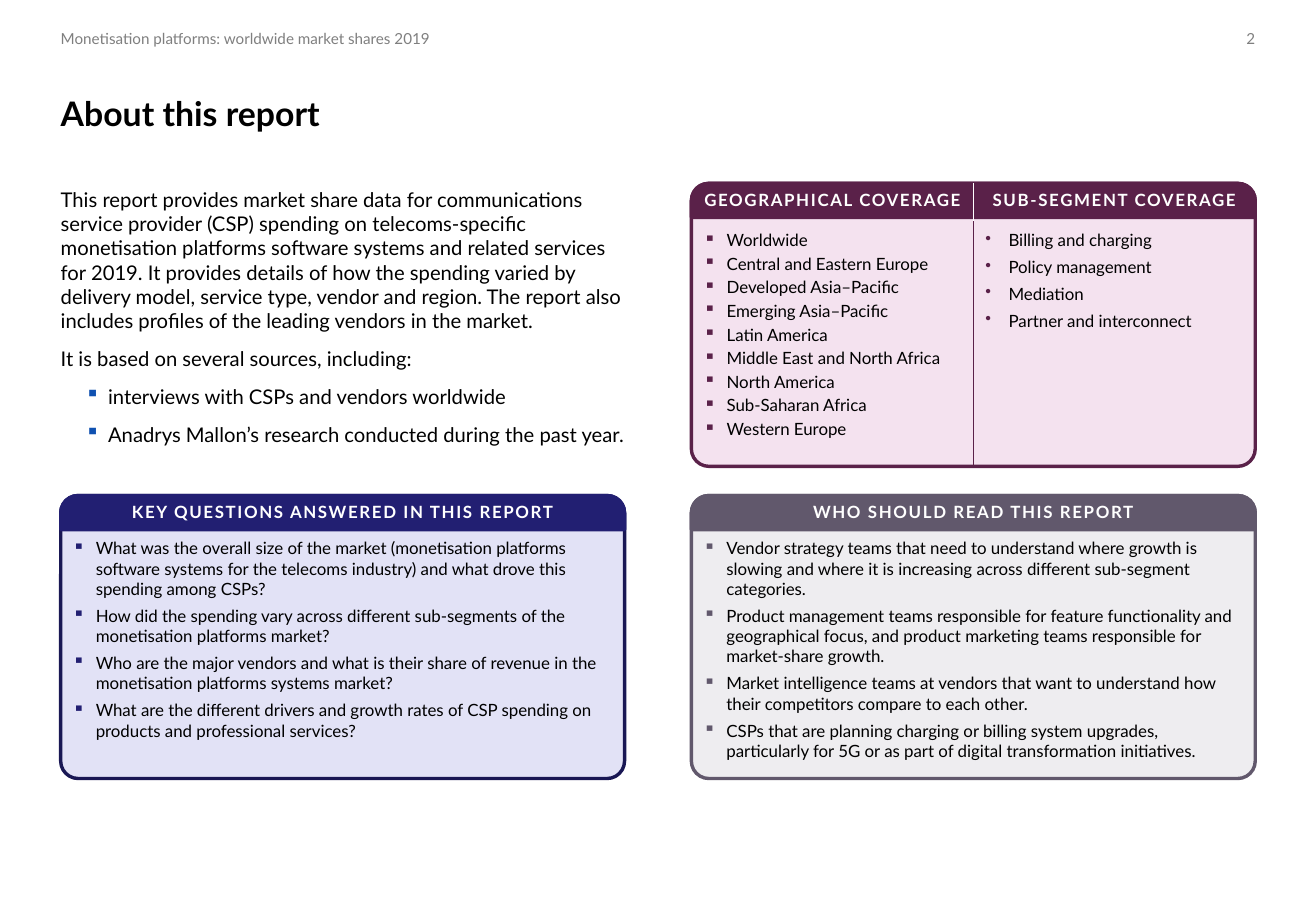
from dataclasses import dataclass
from pptx import Presentation
from pptx.dml.color import RGBColor
from pptx.enum.shapes import MSO_CONNECTOR, MSO_SHAPE
from pptx.enum.text import MSO_ANCHOR, PP_ALIGN
from pptx.oxml.ns import qn
from pptx.oxml.xmlchemy import OxmlElement
from pptx.util import Pt

ROUND = MSO_SHAPE.ROUNDED_RECTANGLE
TOP = MSO_SHAPE.ROUND_2_SAME_RECTANGLE
LINE = MSO_CONNECTOR.STRAIGHT
MID = MSO_ANCHOR.MIDDLE
UPPER = MSO_ANCHOR.TOP
LEFT, MIDDLE, RIGHT = PP_ALIGN.LEFT, PP_ALIGN.CENTER, PP_ALIGN.RIGHT
SCALE = 9144
BAR = 28
HANG = 19


@dataclass(frozen=True)
class Theme:
    font: str = "Lato"
    ink: str = "000000"
    white: str = "FFFFFF"
    grey: str = "7F7F7F"
    mark: str = "0F51B1"
    blue: tuple = ("221F72", "191754", "C7C6EF")
    slate: tuple = ("61586C", "61586C", "DFDCE3")
    plum: tuple = ("5A2149", "5A2149", "EAC6E0")
    small: int = 9
    note: int = 10
    body: int = 12
    title: int = 20


THEME = Theme()

INTRO = [
    "This report provides market share data for communications service provider (CSP) spending on "
    "telecoms-specific monetisation platforms software systems and related services for 2019. It "
    "provides details of how the spending varied by delivery model, service type, vendor and region. "
    "The report also includes profiles of the leading vendors in the market.",
    "It is based on several sources, including:",
]
SOURCES = [
    "interviews with CSPs and vendors worldwide",
    "Anadrys Mallon’s research conducted during the past year.",
]
ASKED = [
    "What was the overall size of the market (monetisation platforms software systems for the "
    "telecoms industry) and what drove this spending among CSPs?",
    "How did the spending vary across different sub-segments of the monetisation platforms market?",
    "Who are the major vendors and what is their share of revenue in the monetisation platforms "
    "systems market?",
    "What are the different drivers and growth rates of CSP spending on products and professional "
    "services?",
]
READERS = [
    "Vendor strategy teams that need to understand where growth is slowing and where it is "
    "increasing across different sub-segment categories.",
    "Product management teams responsible for feature functionality and geographical focus, and "
    "product marketing teams responsible for market-share growth.",
    "Market intelligence teams at vendors that want to understand how their competitors compare to "
    "each other.",
    "CSPs that are planning charging or billing system upgrades, particularly for 5G or as part of "
    "digital transformation initiatives.",
]
SCOPE = [
    ("GEOGRAPHICAL COVERAGE", "▪", 2, [
        "Worldwide", "Central and Eastern Europe", "Developed Asia–Pacific",
        "Emerging Asia–Pacific", "Latin America", "Middle East and North Africa",
        "North America", "Sub-Saharan Africa", "Western Europe"]),
    ("SUB-SEGMENT COVERAGE", "•", 4, [
        "Billing and charging", "Policy management", "Mediation", "Partner and interconnect"]),
]


def px(*sizes):
    return [size * SCALE for size in sizes]


def rgb(tone):
    return RGBColor.from_string(tone)


def child(root, tag, **attrs):
    node = OxmlElement(tag)
    for key, value in attrs.items():
        node.set(key, str(value))
    root.append(node)
    return node


def write(frame, text, size, tone=THEME.ink, bold=False, align=LEFT, after=0,
          bullet=None, dot=None, left=HANG, track=0):
    para = frame.paragraphs[0]
    if para.runs:
        para = frame.add_paragraph()
    para.alignment = align
    para.space_after = Pt(after)
    if bullet:
        props = para._p.get_or_add_pPr()
        props.set("marL", str(left * SCALE))
        props.set("indent", str(-HANG * SCALE))
        child(child(props, "a:buClr"), "a:srgbClr", val=dot)
        child(props, "a:buChar", char=bullet)
    run = para.add_run()
    run.text = text
    font = run.font
    font.name, font.size, font.bold = THEME.font, Pt(size), bold
    font.color.rgb = rgb(tone)
    if track:
        run._r.get_or_add_rPr().set("spc", str(track * 100))
    return para


def inset(frame, side, top, base, anchor):
    frame.word_wrap = True
    frame.vertical_anchor = anchor
    frame.margin_left = frame.margin_right = side * SCALE
    frame.margin_top, frame.margin_bottom = px(top, base)


def label(slide, box, side=0, anchor=MID):
    frame = slide.shapes.add_textbox(*px(*box)).text_frame
    inset(frame, side, 5, 5, anchor)
    return frame


def block(slide, kind, box, fill, edge, *bends):
    shape = slide.shapes.add_shape(kind, *px(*box))
    shape.shadow.inherit = False
    shape.fill.solid()
    shape.fill.fore_color.rgb = rgb(fill)
    shape.line.color.rgb = rgb(edge)
    shape.line.width = Pt(2)
    for spot, bend in enumerate(bends):
        shape.adjustments[spot] = bend
    return shape


def panel(slide, box, tones, head=None, items=()):
    x, y, w, h = box
    main, edge, pale = tones
    card = block(slide, ROUND, box, pale, edge, 0.062)
    tint = card._element.spPr.find(qn("a:solidFill"))[0]
    child(tint, "a:alpha", val=50000)
    bar = block(slide, TOP, (x, y, w, BAR), main, main, 0.5, 0)
    if head:
        inset(bar.text_frame, 10, 0, 5, MID)
        write(bar.text_frame, head, THEME.note, THEME.white, True, MIDDLE, track=1)
        frame = label(slide, (x, y + BAR + 2, w, h - BAR - 2), 10, UPPER)
        for item in items:
            write(frame, item, THEME.note, after=4, bullet="▪", dot=main)


def border(cell, drawn, tone):
    props = cell._tc.get_or_add_tcPr()
    for side in "LRTB":
        edge = child(props, f"a:ln{side}", w=Pt(1))
        if side == drawn:
            child(child(edge, "a:solidFill"), "a:srgbClr", val=tone)
        else:
            child(edge, "a:noFill")
    cell.fill.background()


def scope(slide, box):
    x, y, w, h = box
    main = THEME.plum[0]
    panel(slide, box, THEME.plum)
    table = slide.shapes.add_table(1, 2, *px(*box)).table
    table.first_row = table.horz_banding = False
    for cell, drawn, (head, mark, gap, items) in zip(table.rows[0].cells, "RL", SCOPE):
        border(cell, drawn, main)
        inset(cell, 10, 5, 5, UPPER)
        frame = cell.text_frame
        write(frame, head, THEME.note, THEME.white, True, MIDDLE, 12, track=1)
        for item in items:
            write(frame, item, THEME.note, after=gap, bullet=mark, dot=main)
    mid = x + w // 2
    rule = slide.shapes.add_connector(LINE, *px(mid, y + BAR + 3, mid, y))
    rule.line.color.rgb = rgb(THEME.white)
    rule.line.width = Pt(0.75)
    child(rule._element.spPr, "a:effectLst")


def header(slide, box):
    x, y, w, h = box
    write(label(slide, (x, y, 323, 31)), "Monetisation platforms: worldwide market shares 2019",
          THEME.small, THEME.grey)
    write(label(slide, (x + w - 75, y, 75, 31)), "2", THEME.small, THEME.grey, align=RIGHT)
    title = write(label(slide, (x, y + 35, w, h - 35)), "About this report", THEME.title, bold=True)
    title.line_spacing = Pt(25)


def intro(slide, box):
    frame = label(slide, box, anchor=UPPER)
    for text in INTRO:
        write(frame, text, THEME.body, after=8)
    for text in SOURCES:
        write(frame, text, THEME.body, after=8, bullet="▪", dot=THEME.mark, left=2 * HANG + 1)


def main():
    deck = Presentation()
    deck.slide_width, deck.slide_height = px(1083, 750)
    slide = deck.slides.add_slide(deck.slide_layouts[6])
    near, far, wide, tall = 50, 569, 464, 233
    high, low = 151, 408
    header(slide, (near, 16, far + wide - near, 118))
    intro(slide, (near, high - 2, wide, tall + 2))
    scope(slide, (far, high, wide, tall))
    panel(slide, (near, low, wide, tall), THEME.blue, "KEY QUESTIONS ANSWERED IN THIS REPORT", ASKED)
    panel(slide, (far, low, wide, tall), THEME.slate, "WHO SHOULD READ THIS REPORT", READERS)
    deck.save("out.pptx")


if __name__ == "__main__":
    main()
